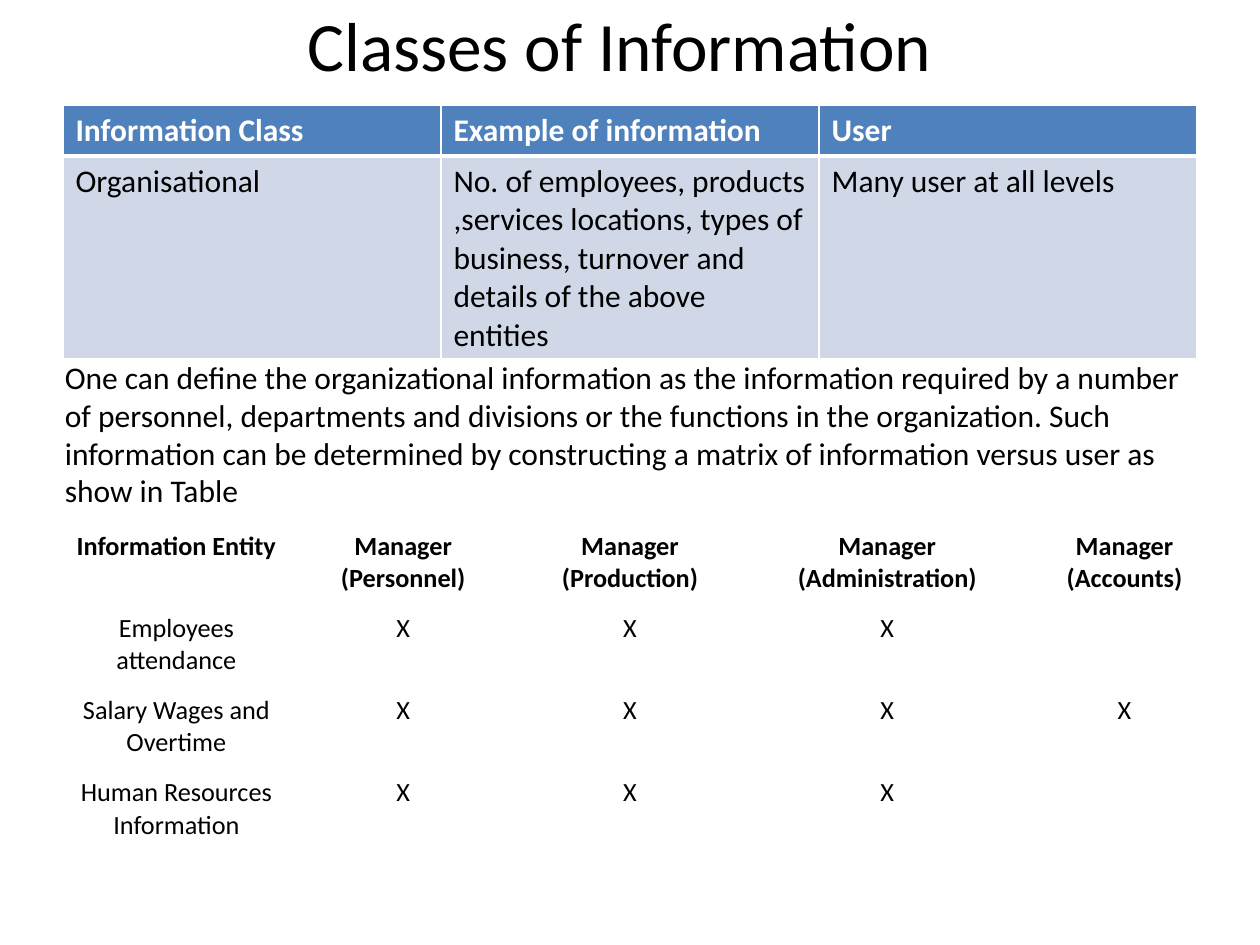
from lxml.etree import SubElement
from pptx import Presentation
from pptx.dml.color import RGBColor
from pptx.enum.text import MSO_ANCHOR as Anchor, PP_ALIGN as Align
from pptx.oxml.ns import qn
from pptx.util import Pt

COLORS = {"text": "000000", "white": "FFFFFF", "header": "4F81BD", "body": "D0D8E8"}
FONT = "Calibri"


class SlideBuilder:
    def __init__(self, slide):
        self.slide = slide

    def fill_text(self, frame, text, size, color="text", bold=False, align=Align.LEFT):
        frame.word_wrap = True
        frame.text = text
        for paragraph in frame.paragraphs:
            paragraph.alignment = align
            font = paragraph.font
            font.name, font.size, font.bold = FONT, Pt(size), bold
            font.color.rgb = RGBColor.from_string(COLORS[color])

    def text(self, box, text, size, align=Align.LEFT, anchor=Anchor.TOP):
        frame = self.slide.shapes.add_textbox(*map(Pt, box)).text_frame
        frame.vertical_anchor = anchor
        self.fill_text(frame, text, size, align=align)

    def border(self, cell, widths):
        properties = cell._tc.get_or_add_tcPr()
        for side, width in widths.items():
            line = SubElement(properties, qn(f"a:ln{side}"), w=str(Pt(width)))
            fill = SubElement(line, qn("a:solidFill"))
            SubElement(fill, qn("a:srgbClr"), val=COLORS["white"])

    def table(self, left, top, widths, heights, rows, size, fills=(None, None),
              header_color="text", header_line=1, align=Align.LEFT, margins=None):
        table = self.slide.shapes.add_table(
            len(rows), len(widths), Pt(left), Pt(top),
            Pt(sum(widths)), Pt(sum(heights))).table
        table.horz_banding = False
        for column, width in zip(table.columns, widths):
            column.width = Pt(width)
        for index, (row, height, texts) in enumerate(zip(table.rows, heights, rows)):
            row.height = Pt(height)
            is_header = index == 0
            fill = fills[0] if is_header else fills[1]
            lines = {"L": 1, "R": 1,
                     "T": header_line if index == 1 else 1,
                     "B": header_line if is_header else 1}
            for cell, text in zip(row.cells, texts):
                # Borders come before the fill in the cell properties
                self.border(cell, lines)
                if fill:
                    cell.fill.solid()
                    cell.fill.fore_color.rgb = RGBColor.from_string(COLORS[fill])
                else:
                    cell.fill.background()
                if margins:
                    cell.margin_left = cell.margin_right = Pt(margins[0])
                    cell.margin_top = cell.margin_bottom = Pt(margins[1])
                self.fill_text(cell.text_frame, text, size,
                               header_color if is_header else "text", is_header, align)


def main():
    presentation = Presentation()
    presentation.slide_width, presentation.slide_height = Pt(720), Pt(540)
    builder = SlideBuilder(presentation.slides.add_slide(presentation.slide_layouts[6]))

    # Title
    builder.text((30, 0, 648, 50.4), "Classes of Information", 39.6,
                 Align.CENTER, Anchor.MIDDLE)

    # Information classes
    builder.table(
        36, 60, [216] * 3, [29.2, 116],
        [["Information Class", "Example of information", "User"],
         ["Organisational",
          "No. of employees, products ,services locations, types of business, "
          "turnover and details of the above entities",
          "Many user at all levels"]],
        18, fills=("header", "body"), header_color="white", header_line=3)

    # Explanation
    builder.text(
        (30, 201, 654, 94.5),
        "One can define the organizational information as the information required "
        "by a number of personnel, departments and divisions or the functions in the "
        "organization. Such information can be determined by constructing a matrix of "
        "information versus user as show in Table", 18)

    # Matrix of information versus user
    builder.table(
        36, 300, [129.6, 129.6, 129.6, 164.4, 106.8], [47] * 4,
        [["Information Entity", "Manager\n(Personnel)", "Manager (Production)",
          "Manager\n(Administration)", "Manager\n(Accounts)"],
         ["Employees attendance", "X", "X", "X", ""],
         ["Salary Wages and Overtime", "X", "X", "X", "X"],
         ["Human Resources Information", "X", "X", "X", ""]],
        15, align=Align.CENTER, margins=(4.5, 3))

    presentation.save("out.pptx")


if __name__ == "__main__":
    main()
